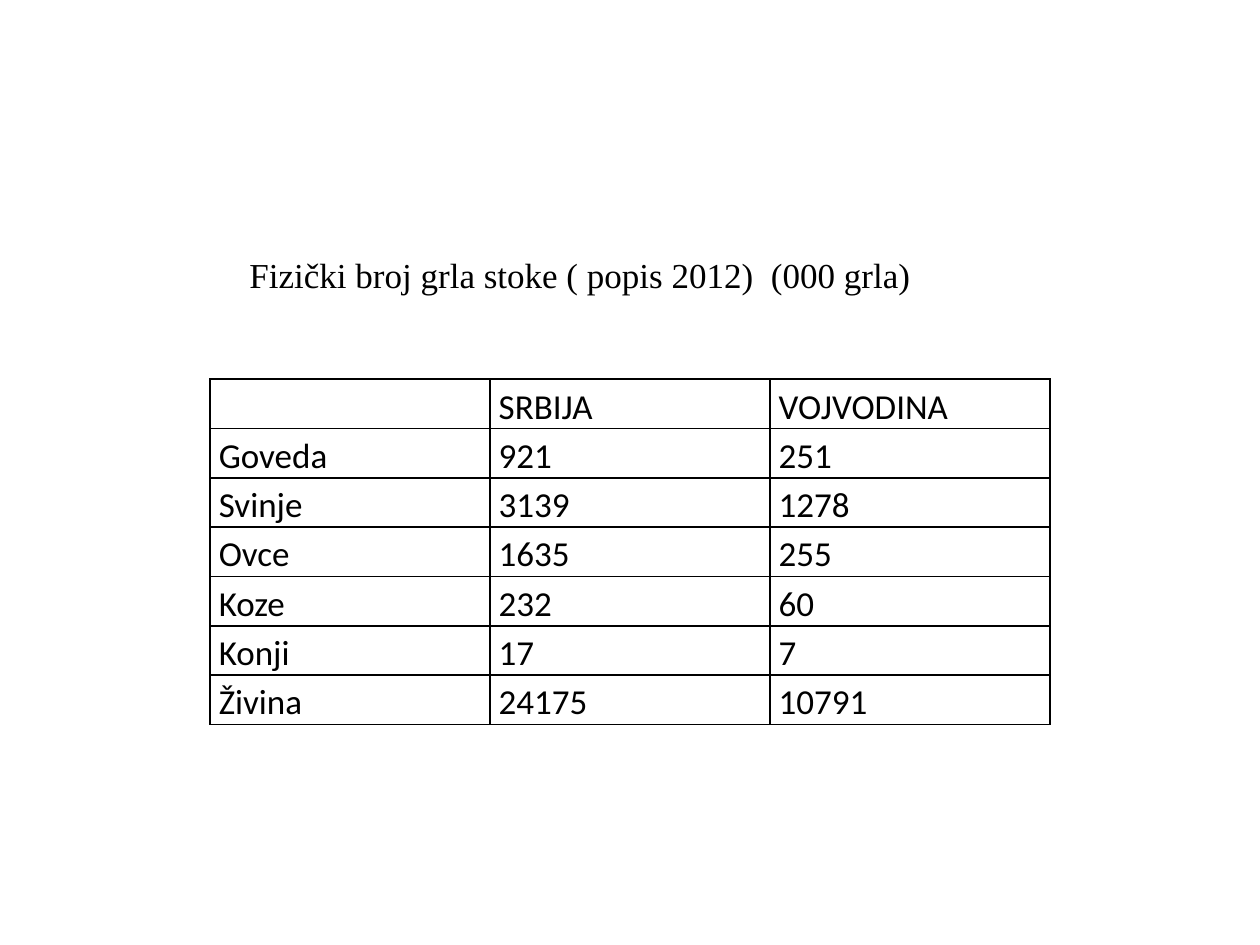
from lxml.etree import SubElement
from pptx import Presentation
from pptx.dml.color import RGBColor
from pptx.enum.text import MSO_ANCHOR, MSO_AUTO_SIZE, PP_ALIGN
from pptx.oxml.ns import qn
from pptx.util import Inches, Pt

TITLE = "Fizički broj grla stoke ( popis 2012)  (000 grla)"
LIVESTOCK = [
    ("", "SRBIJA", "VOJVODINA"),
    ("Goveda", "921", "251"),
    ("Svinje", "3139", "1278"),
    ("Ovce", "1635", "255"),
    ("Koze", "232", "60"),
    ("Konji", "17", "7"),
    ("Živina", "24175", "10791"),
]
THEME = {
    "ink": "000000",
    "size": Pt(20),
    "title_font": "Times New Roman",
    "table_font": "Calibri",
    "border": Pt(1),
}


def style_font(font, name):
    font.name = name
    font.size = THEME["size"]
    font.bold = False
    font.color.rgb = RGBColor.from_string(THEME["ink"])


def add_borders(cell):
    tcPr = cell._tc.get_or_add_tcPr()
    for side in ("a:lnL", "a:lnR", "a:lnT", "a:lnB"):
        ln = SubElement(tcPr, qn(side), w=str(THEME["border"]))
        fill = SubElement(ln, qn("a:solidFill"))
        SubElement(fill, qn("a:srgbClr"), val=THEME["ink"])


def add_title(slide):
    sp = slide.shapes.title
    sp.left, sp.top, sp.width, sp.height = map(Inches, (1.88, 1.95, 5.48, 0.77))
    tf = sp.text_frame
    tf.text = TITLE
    tf.word_wrap = False
    tf.auto_size = MSO_AUTO_SIZE.NONE
    tf.vertical_anchor = MSO_ANCHOR.TOP
    tf.margin_top = Inches(0.06)
    p = tf.paragraphs[0]
    p.alignment = PP_ALIGN.LEFT
    style_font(p.runs[0].font, THEME["title_font"])


def add_livestock_table(slide, prs):
    """Centre the table across two thirds of the slide's width."""
    rows, cols = len(LIVESTOCK), len(LIVESTOCK[0])
    width = prs.slide_width * 2 // 3
    left = (prs.slide_width - width) // 2
    table = slide.shapes.add_table(
        rows, cols, left, Inches(3.01), width, Inches(2.68)).table
    table.first_row = table.horz_banding = False
    for r, values in enumerate(LIVESTOCK):
        for c, value in enumerate(values):
            cell = table.cell(r, c)
            cell.text = value
            cell.margin_left = cell.margin_right = Inches(0.07)
            cell.margin_top = cell.margin_bottom = 0
            p = cell.text_frame.paragraphs[0]
            p.line_spacing = 1.15
            style_font(p.font, THEME["table_font"])
            for run in p.runs:
                style_font(run.font, THEME["table_font"])
            add_borders(cell)
            cell.fill.background()


def main():
    prs = Presentation()
    prs.slide_width, prs.slide_height = Inches(10), Inches(7.5)
    slide = prs.slides.add_slide(prs.slide_layouts[5])
    add_livestock_table(slide, prs)
    add_title(slide)
    prs.save("out.pptx")


if __name__ == "__main__":
    main()
